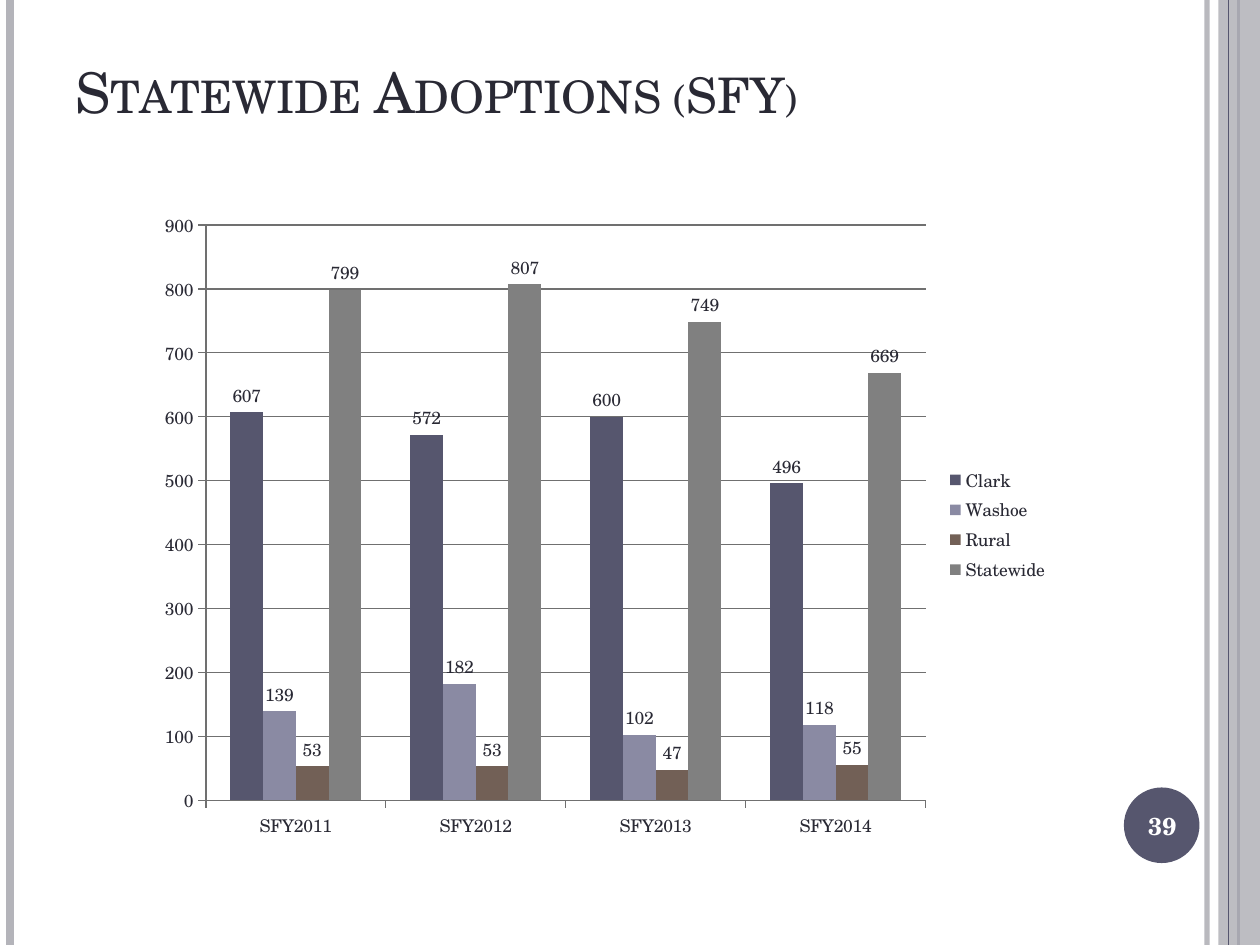
from lxml import etree
from pptx import Presentation
from pptx.chart.data import CategoryChartData
from pptx.dml.color import RGBColor
from pptx.enum import chart as ch, shapes as sh, text as tx
from pptx.oxml import parse_xml
from pptx.oxml.ns import nsdecls, qn
from pptx.util import Inches, Pt

FACE = "TeX Gyre Schola"
INK, NAVY, PALE, GRID = "292934", "56566E", "B4B4BA", "707070"
YEARS = ["SFY2011", "SFY2012", "SFY2013", "SFY2014"]
SERIES = [
    ("Clark", NAVY, (607, 572, 600, 496)),
    ("Washoe", "8A8AA3", (139, 182, 102, 118)),
    ("Rural", "726056", (53, 53, 47, 55)),
    ("Statewide", "808080", (799, 807, 749, 669)),
]


def rgb(code):
    return RGBColor.from_string(code)


def style(font, size, color, bold=False):
    font.name, font.size, font.bold = FACE, Pt(size), bold
    font.color.rgb = rgb(color)


def fade(shape, share):
    """Set the opacity of a shape's colours, in percent."""
    for color in shape._element.spPr.iter(qn("a:srgbClr")):
        etree.SubElement(color, qn("a:alpha")).set("val", str(share * 1000))


def add_rule(slide, x, color, width):
    """Draw a full-height vertical line."""
    rule = slide.shapes.add_connector(
        sh.MSO_CONNECTOR.STRAIGHT, Inches(x), 0, Inches(x), Inches(7.5))
    rule.line.color.rgb = rgb(color)
    rule.line.width = Pt(width)
    etree.SubElement(rule._element.spPr, qn("a:effectLst"))
    return rule


def add_block(slide, kind, box, color):
    block = slide.shapes.add_shape(kind, *map(Inches, box))
    block.shadow.inherit = False
    block.fill.solid()
    block.fill.fore_color.rgb = rgb(color)
    block.line.fill.background()
    return block


def add_frame(slide):
    fade(add_rule(slide, 9.58, PALE, 3), 93)
    add_rule(slide, 0.08, PALE, 4.5)
    add_rule(slide, 9.83, NAVY, 1.5)
    band = add_block(slide, sh.MSO_SHAPE.RECTANGLE, (9.67, 0, 0.33, 7.5), PALE)
    fade(band, 87)
    add_rule(slide, 9.75, NAVY, 0.75)
    add_block(slide, sh.MSO_SHAPE.OVAL, (8.92, 6.25, 0.6, 0.6), NAVY)


def set_title(slide):
    title = slide.shapes.title
    title.left, title.top = Inches(0.5), Inches(0.17)
    title.width, title.height = Inches(8.17), Inches(0.87)
    frame = title.text_frame
    frame.vertical_anchor = tx.MSO_ANCHOR.BOTTOM
    para = frame.paragraphs[0]
    para.alignment = tx.PP_ALIGN.LEFT
    for words, size in (("Statewide Adoptions ", 32), ("(SFY)", 28)):
        run = para.add_run()
        run.text = words
        style(run.font, size, INK)
        run._r.get_or_add_rPr().set("cap", "small")


def place_plot(chart, x, y, w, h):
    """Fix the inner plot area, in shares of the chart's size."""
    area = chart._chartSpace.chart.plotArea
    for old in area.findall(qn("c:layout")):
        area.remove(old)
    parts = "".join(
        f'<c:{tag} val="{val}"/>' for tag, val in (
            ("layoutTarget", "inner"), ("xMode", "edge"), ("yMode", "edge"),
            ("x", x), ("y", y), ("w", w), ("h", h)))
    area.insert(0, parse_xml(
        f'<c:layout {nsdecls("c")}><c:manualLayout>{parts}'
        '</c:manualLayout></c:layout>'))


def set_axis(axis):
    axis.major_tick_mark = ch.XL_TICK_MARK.OUTSIDE
    axis.minor_tick_mark = ch.XL_TICK_MARK.NONE
    axis.format.line.color.rgb = rgb(GRID)
    axis.format.line.width = Pt(0.75)


def add_bars(slide):
    data = CategoryChartData()
    data.categories = YEARS
    for name, _, vals in SERIES:
        data.add_series(name, vals)
    chart = slide.shapes.add_chart(
        ch.XL_CHART_TYPE.COLUMN_CLUSTERED,
        *map(Inches, (1.17, 1.58, 7.25, 5.17)), data).chart
    style(chart.font, 10, INK)
    chart.has_title = False
    chart.has_legend = True
    chart.legend.position = ch.XL_LEGEND_POSITION.RIGHT
    chart.legend.include_in_layout = False
    place_plot(chart, 0.064, 0.04, 0.788, 0.883)

    set_axis(chart.category_axis)
    axis = chart.value_axis
    set_axis(axis)
    axis.minimum_scale, axis.maximum_scale, axis.major_unit = 0, 900, 100
    axis.has_major_gridlines = True
    axis.major_gridlines.format.line.color.rgb = rgb(GRID)
    axis.major_gridlines.format.line.width = Pt(0.75)

    plot = chart.plots[0]
    plot.gap_width, plot.overlap = 150, 0
    plot.vary_by_categories = False
    for bars, (_, color, _) in zip(plot.series, SERIES):
        bars.format.fill.solid()
        bars.format.fill.fore_color.rgb = rgb(color)
        bars.data_labels.show_value = True
        bars.data_labels.position = ch.XL_LABEL_POSITION.OUTSIDE_END


def add_number(slide):
    box = slide.shapes.add_textbox(*map(Inches, (8.89, 6.27, 0.67, 0.57)))
    frame = box.text_frame
    frame.word_wrap = True
    frame.vertical_anchor = tx.MSO_ANCHOR.MIDDLE
    para = frame.paragraphs[0]
    para.text = "39"
    para.alignment = tx.PP_ALIGN.CENTER
    style(para.font, 14, "FFFFFF", bold=True)


def main():
    deck = Presentation()
    deck.slide_width, deck.slide_height = Inches(10), Inches(7.5)
    slide = deck.slides.add_slide(deck.slide_layouts[5])
    add_frame(slide)
    set_title(slide)
    add_bars(slide)
    add_number(slide)
    deck.save("out.pptx")


if __name__ == "__main__":
    main()
